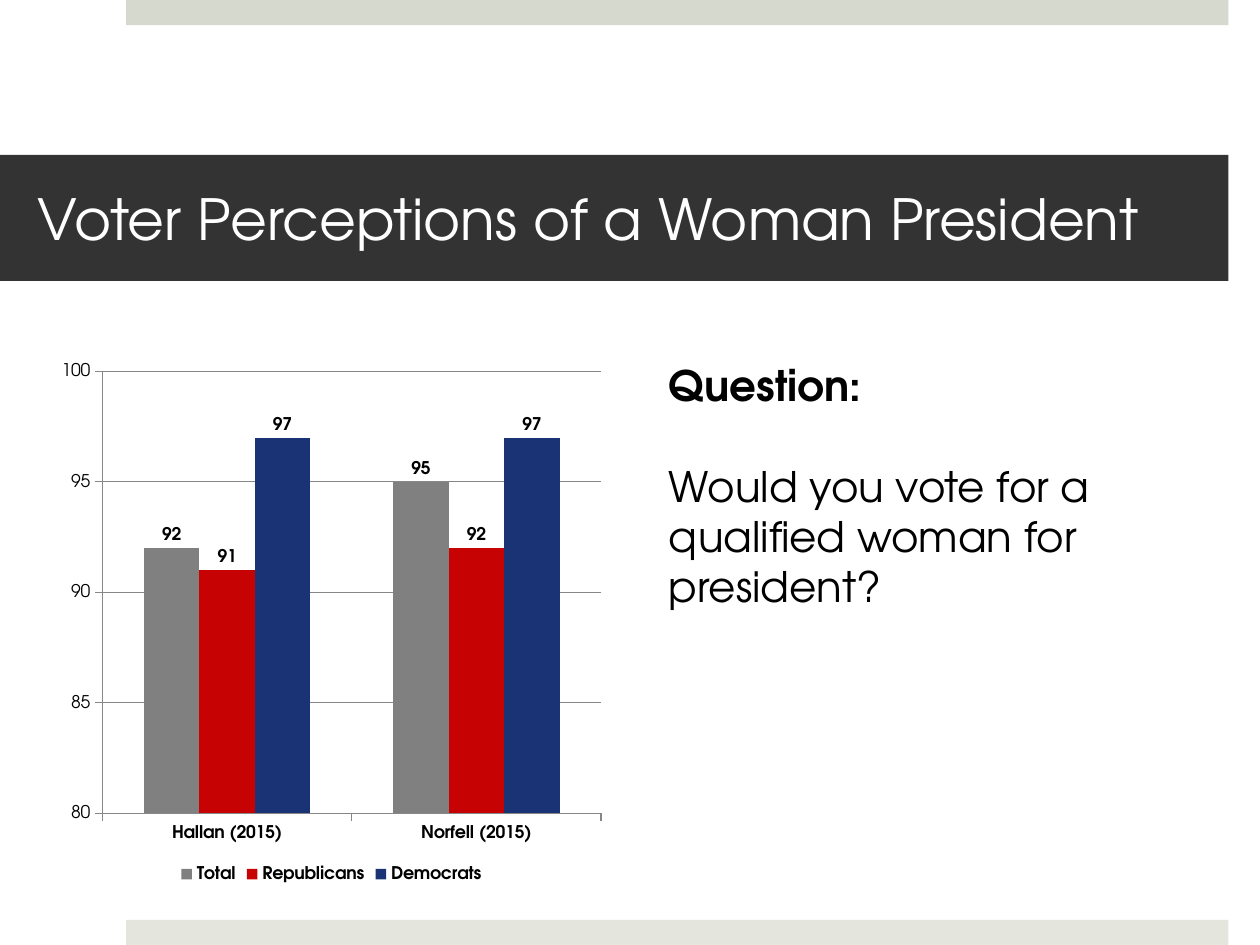
from dataclasses import dataclass

from pptx import Presentation
from pptx.chart.data import CategoryChartData
from pptx.dml.color import RGBColor
from pptx.enum.chart import XL_CHART_TYPE, XL_LABEL_POSITION, XL_LEGEND_POSITION, XL_TICK_MARK
from pptx.enum.shapes import MSO_SHAPE
from pptx.enum.text import MSO_ANCHOR, MSO_AUTO_SIZE, PP_ALIGN
from pptx.util import Pt


@dataclass(frozen=True)
class Theme:
    font: str = "TeX Gyre Adventor"
    title_size: float = 32.4
    body_size: float = 24
    chart_size: float = 10
    text: str = "000000"
    title_text: str = "FFFFFF"
    title_band: str = "333333"
    top_bar: str = "D6D9CD"
    bottom_bar: str = "E4E6DE"
    axis: str = "878787"
    total: str = "808080"
    republicans: str = "C70202"
    democrats: str = "193374"


theme = Theme()


def set_font(font, size, color, bold=False):
    font.name = theme.font
    font.size = Pt(size)
    font.bold = bold
    font.color.rgb = RGBColor.from_string(color)


def fill_solid(part, color):
    part.fill.solid()
    part.fill.fore_color.rgb = RGBColor.from_string(color)


prs = Presentation()
prs.slide_width, prs.slide_height = Pt(720), Pt(540)
slide = prs.slides.add_slide(prs.slide_layouts[5])

# Edge bars
bar_height = 14.4
for top, color in ((0, theme.top_bar), (540 - bar_height, theme.bottom_bar)):
    edge_bar = slide.shapes.add_shape(
        MSO_SHAPE.RECTANGLE, Pt(72), Pt(top), Pt(630), Pt(bar_height))
    edge_bar.shadow.inherit = False
    fill_solid(edge_bar, color)
    edge_bar.line.fill.background()

# Title band
title = slide.shapes.title
title.left, title.top, title.width, title.height = Pt(0), Pt(88.56), Pt(702), Pt(72)
fill_solid(title, theme.title_band)
title_frame = title.text_frame
title_frame.text = "Voter Perceptions of a Woman President"
title_frame.auto_size = MSO_AUTO_SIZE.NONE
title_frame.vertical_anchor = MSO_ANCHOR.MIDDLE
title_frame.margin_left = title_frame.margin_right = Pt(21.6)
title_frame.margin_top = title_frame.margin_bottom = Pt(3.6)
title_frame.paragraphs[0].alignment = PP_ALIGN.LEFT
set_font(title_frame.paragraphs[0].font, theme.title_size, theme.title_text)

# Poll chart
polls = (
    ("Total", (92, 95), theme.total),
    ("Republicans", (91, 92), theme.republicans),
    ("Democrats", (97, 97), theme.democrats),
)
poll_data = CategoryChartData(number_format="General")
poll_data.categories = ["Hallan (2015)", "Norfell (2015)"]
for group, shares, _ in polls:
    poll_data.add_series(group, shares)

chart = slide.shapes.add_chart(
    XL_CHART_TYPE.COLUMN_CLUSTERED, Pt(28.8), Pt(201.6), Pt(321.12), Pt(305.28),
    poll_data).chart
set_font(chart.font, theme.chart_size, theme.text)
chart.has_title = False
chart.has_legend = True
chart.legend.position = XL_LEGEND_POSITION.BOTTOM
chart.legend.include_in_layout = False
set_font(chart.legend.font, theme.chart_size, theme.text, bold=True)

plot = chart.plots[0]
plot.vary_by_categories = False
plot.gap_width = 150
plot.overlap = 0
for series, (_, _, color) in zip(plot.series, polls):
    fill_solid(series.format, color)
    series.invert_if_negative = False
    labels = series.data_labels
    labels.show_value = True
    labels.position = XL_LABEL_POSITION.OUTSIDE_END
    set_font(labels.font, theme.chart_size, theme.text, bold=True)

share_axis = chart.value_axis
share_axis.minimum_scale, share_axis.maximum_scale = 80, 100
share_axis.major_unit = 5
share_axis.has_major_gridlines = True
for axis, bold in ((share_axis, False), (chart.category_axis, True)):
    axis.major_tick_mark = XL_TICK_MARK.OUTSIDE
    set_font(axis.tick_labels.font, theme.chart_size, theme.text, bold)
for line in (share_axis.format.line, chart.category_axis.format.line,
             share_axis.major_gridlines.format.line):
    line.color.rgb = RGBColor.from_string(theme.axis)
    line.width = Pt(0.75)

# Survey question
question = slide.shapes.add_textbox(Pt(375.12), Pt(201.6), Pt(316.08), Pt(152.64)).text_frame
question.word_wrap = True
question.text = "Question:\nWould you vote for a qualified woman for president?"
heading, wording = question.paragraphs
set_font(heading.font, theme.body_size, theme.text, bold=True)
set_font(wording.font, theme.body_size, theme.text)
wording.space_before = Pt(29)

prs.save("out.pptx")
